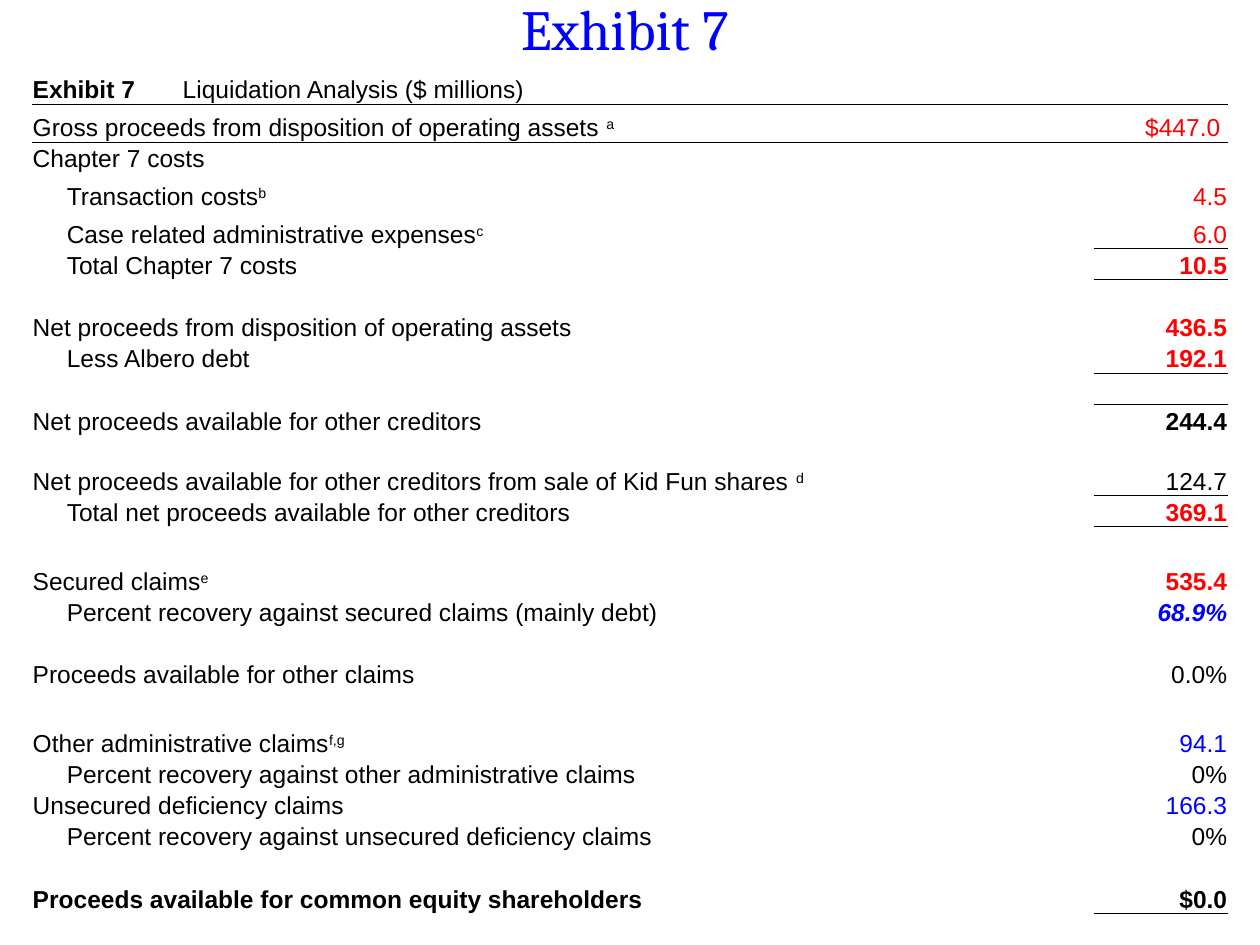
from dataclasses import dataclass

from lxml.etree import SubElement
from pptx import Presentation
from pptx.dml.color import RGBColor
from pptx.enum.text import MSO_ANCHOR, PP_ALIGN
from pptx.oxml import parse_xml
from pptx.oxml.ns import nsdecls, qn
from pptx.util import Inches, Pt

NO_STYLE = "{2D5ABB26-0587-4C30-8999-92F81FD0307C}"


@dataclass(frozen=True)
class Theme:
    black: RGBColor = RGBColor(0, 0, 0)
    red: RGBColor = RGBColor(255, 0, 0)
    blue: RGBColor = RGBColor(0, 0, 255)
    title_font: str = "Cambria"
    body_font: str = "Arial"
    title_size: float = 32.4
    body_size: float = 14
    rule_width: float = 0.5


@dataclass
class Line:
    """One table row; style holds b (bold) and i (italic) for the amount."""
    label: str = ""
    note: str = ""
    amount: str = ""
    color: str = "black"
    style: str = ""
    indent: bool = False
    bold_label: bool = False
    wide: bool = False
    ruled: bool = False


LINES = [
    Line("Gross proceeds from disposition of operating assets ", "a", "$447.0 ", "red", wide=True),
    Line("Chapter 7 costs"),
    Line("Transaction costs", "b", "4.5", "red", indent=True),
    Line("Case related administrative expenses", "c", "6.0", "red", indent=True, ruled=True),
    Line("Total Chapter 7 costs", "", "10.5", "red", "b", indent=True),
    Line(),
    Line("Net proceeds from disposition of operating assets", "", "436.5", "red", "b"),
    Line("Less Albero debt", "", "192.1", "red", "b", indent=True, ruled=True),
    Line(),
    Line("Net proceeds available for other creditors", "", "244.4", style="b"),
    Line("Net proceeds available for other creditors from sale of Kid Fun shares ", "d", "124.7",
         wide=True, ruled=True),
    Line("Total net proceeds available for other creditors", "", "369.1", "red", "b", indent=True),
    Line(),
    Line("Secured claims", "e", "535.4", "red", "b"),
    Line("Percent recovery against secured claims (mainly debt)", "", "68.9%", "blue", "bi",
         indent=True, wide=True),
    Line(),
    Line("Proceeds available for other claims", "", "0.0%"),
    Line(),
    Line("Other administrative claims", "f,g", "94.1", "blue"),
    Line("Percent recovery against other administrative claims", "", "0%", indent=True, wide=True),
    Line("Unsecured deficiency claims", "", "166.3", "blue"),
    Line("Percent recovery against unsecured deficiency claims", "", "0%", indent=True, wide=True),
    Line(),
    Line("Proceeds available for common equity shareholders", "", "$0.0", style="b",
         bold_label=True, wide=True, ruled=True),
]


class SlideBuilder:
    def __init__(self, slide, theme):
        self.slide = slide
        self.theme = theme

    def add_run(self, paragraph, text, color="black", style="", raised=False):
        run = paragraph.add_run()
        run.text = text
        run.font.name = self.theme.body_font
        run.font.size = Pt(self.theme.body_size)
        run.font.color.rgb = getattr(self.theme, color)
        run.font.bold = "b" in style
        run.font.italic = "i" in style
        if raised:
            run.font._element.set("baseline", "30000")

    def add_title(self, text):
        title = self.slide.shapes.title
        title.left, title.top = Inches(0.25), Inches(0.05)
        title.width, title.height = Inches(9.42), Inches(0.5)
        frame = title.text_frame
        frame.text = text
        frame.vertical_anchor = MSO_ANCHOR.BOTTOM
        frame.margin_left = frame.margin_right = Inches(0.12)
        frame.margin_top = frame.margin_bottom = Inches(0.06)
        paragraph = frame.paragraphs[0]
        paragraph.alignment = PP_ALIGN.CENTER
        font = paragraph.runs[0].font
        font.name = self.theme.title_font
        font.size = Pt(self.theme.title_size)
        font.color.rgb = self.theme.blue

    def prepare_cell(self, cell):
        """Clear the fill, tighten margins and keep empty rows at body size."""
        cell.fill.background()
        cell.vertical_anchor = MSO_ANCHOR.BOTTOM
        cell.margin_left = cell.margin_right = cell.margin_top = Inches(0.01)
        cell.margin_bottom = 0
        end = SubElement(cell.text_frame.paragraphs[0]._p, qn("a:endParaRPr"))
        end.set("sz", str(self.theme.body_size * 100))

    def add_rule(self, table, row, column):
        """Draw the border below a cell, which is also the top of the next one."""
        edges = [("lnB", row)]
        if row + 1 < len(table.rows):
            edges.append(("lnT", row + 1))
        for edge, index in edges:
            border = parse_xml(
                f'<a:{edge} {nsdecls("a")} w="{Pt(self.theme.rule_width)}"><a:solidFill>'
                f'<a:srgbClr val="{self.theme.black}"/></a:solidFill></a:{edge}>')
            table.cell(index, column)._tc.get_or_add_tcPr().insert(0, border)

    def fill_heading(self, table, number, caption):
        paragraph = table.cell(0, 0).text_frame.paragraphs[0]
        tabs = SubElement(paragraph._p.get_or_add_pPr(), qn("a:tabLst"))
        SubElement(tabs, qn("a:tab"), pos=str(Inches(1.19)), algn="l")
        self.add_run(paragraph, number, style="b")
        self.add_run(paragraph, "\t" + caption)
        for column in range(len(table.columns)):
            self.add_rule(table, 0, column)

    def fill_line(self, table, row, line):
        if line.label:
            paragraph = table.cell(row, 0).text_frame.paragraphs[0]
            if line.indent:
                paragraph._p.get_or_add_pPr().set("marL", str(Inches(0.27)))
            self.add_run(paragraph, line.label, style="b" if line.bold_label else "")
            if line.note:
                self.add_run(paragraph, line.note, raised=True)
        if line.amount:
            paragraph = table.cell(row, 2).text_frame.paragraphs[0]
            paragraph.alignment = PP_ALIGN.RIGHT
            self.add_run(paragraph, line.amount, line.color, line.style)
        if line.wide:
            table.cell(row, 0).merge(table.cell(row, 1))
        if line.ruled:
            self.add_rule(table, row, 2)

    def add_statement(self, number, caption, lines):
        height, noted_height, spaced_height = 6.67, 0.3, 0.48
        heights = [None] + [
            spaced_height if line.note == "d" else noted_height if line.note else None
            for line in lines]
        plain_height = (height - sum(filter(None, heights))) / heights.count(None)
        frame = self.slide.shapes.add_table(
            len(heights), 3, Inches(0.25), Inches(0.58), Inches(9.5), Inches(height))
        table = frame.table
        table.first_row = table.horz_banding = False
        table._tbl.tblPr.find(qn("a:tableStyleId")).text = NO_STYLE
        for column, width in zip(table.columns, (6.81, 1.62, 1.07)):
            column.width = Inches(width)
        for row, row_height in zip(table.rows, heights):
            row.height = Inches(row_height or plain_height)
        for cell in table.iter_cells():
            self.prepare_cell(cell)
        self.fill_heading(table, number, caption)
        for row, line in enumerate(lines, start=1):
            self.fill_line(table, row, line)


def main():
    presentation = Presentation()
    presentation.slide_width, presentation.slide_height = Inches(10), Inches(7.5)
    slide = presentation.slides.add_slide(presentation.slide_layouts[5])
    builder = SlideBuilder(slide, Theme())
    builder.add_title("Exhibit 7")
    builder.add_statement("Exhibit 7", "Liquidation Analysis ($ millions)", LINES)
    presentation.save("out.pptx")


if __name__ == "__main__":
    main()
